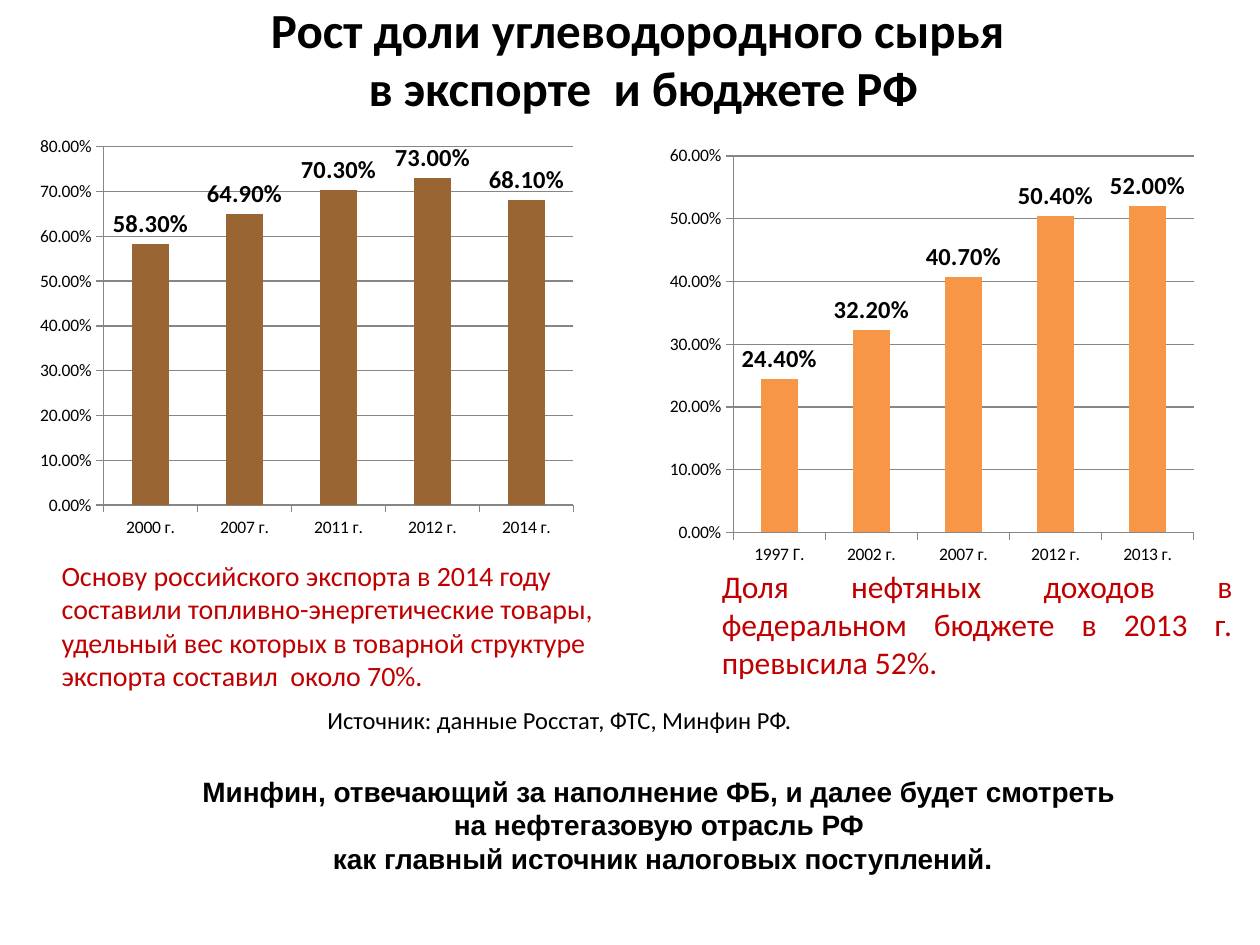
from pptx import Presentation
from pptx.chart.data import CategoryChartData
from pptx.dml.color import RGBColor
from pptx.enum.chart import XL_CHART_TYPE, XL_LABEL_POSITION, XL_TICK_MARK
from pptx.enum.text import MSO_ANCHOR, PP_ALIGN
from pptx.util import Pt

PX = 9144  # 100 px to the inch
BLACK = RGBColor(0x00, 0x00, 0x00)
RED = RGBColor(0xC0, 0x00, 0x00)
BROWN = RGBColor(0x99, 0x66, 0x33)
ORANGE = RGBColor(0xF7, 0x96, 0x46)
GRAY = RGBColor(0x86, 0x86, 0x86)
PERCENT = "0.00%"

TITLE = "Рост доли углеводородного сырья\v в экспорте  и бюджете РФ"
SOURCE = "Источник: данные Росстат, ФТС, Минфин РФ."
CONCLUSION = ("Минфин, отвечающий за наполнение ФБ, и далее будет смотреть "
              "на нефтегазовую отрасль РФ\n"
              " как главный источник налоговых поступлений.")

PANELS = [
    {"box": (23, 102, 473, 454), "chart_h": 331, "indent": 16,
     "color": BROWN, "top": 0.8,
     "data": {"2000 г.": 0.583, "2007 г.": 0.649, "2011 г.": 0.703,
              "2012 г.": 0.73, "2014 г.": 0.681},
     "caption": "Основу российского экспорта в 2014 году составили "
                "топливно-энергетические товары, удельный вес которых в "
                "товарной структуре экспорта составил  около 70%.",
     "size": 16, "align": PP_ALIGN.LEFT},
    {"box": (523, 109, 465, 437), "chart_h": 346, "indent": 40,
     "color": ORANGE, "top": 0.6,
     "data": {"1997 Г.": 0.244, "2002 г.": 0.322, "2007 г.": 0.407,
              "2012 г.": 0.504, "2013 г.": 0.52},
     "caption": "Доля нефтяных доходов в федеральном бюджете в 2013 г. "
                "превысила 52%.",
     "size": 18, "align": PP_ALIGN.JUSTIFY},
]


def emu(*lengths):
    return [n * PX for n in lengths]


def set_font(font, size, color=BLACK, bold=False, name="Calibri"):
    values = {"name": name, "size": Pt(size), "bold": bold}
    for key, value in values.items():
        setattr(font, key, value)
    font.color.rgb = color


def fill_text(tf, text, align, anchor=MSO_ANCHOR.TOP, **font):
    tf.word_wrap = True
    tf.vertical_anchor = anchor
    tf.text = text
    for p in tf.paragraphs:
        p.alignment = align
        for r in p.runs:
            set_font(r.font, **font)


def add_title(s, box):
    title = s.shapes.title
    for key, value in zip(("left", "top", "width", "height"), emu(*box)):
        setattr(title, key, value)
    fill_text(title.text_frame, TITLE, PP_ALIGN.CENTER, MSO_ANCHOR.MIDDLE,
              size=28, bold=True)


def add_text(s, box, text, align=PP_ALIGN.LEFT, **style):
    tf = s.shapes.add_textbox(*emu(*box)).text_frame
    fill_text(tf, text, align, **style)


def add_share_chart(s, box, data, color, top):
    chart_data = CategoryChartData(number_format=PERCENT)
    chart_data.categories = list(data)
    chart_data.add_series("Series 1", list(data.values()))
    chart = s.shapes.add_chart(XL_CHART_TYPE.COLUMN_CLUSTERED, *emu(*box),
                               chart_data).chart
    chart.has_legend = chart.has_title = False
    set_font(chart.font, 10)

    values = chart.value_axis
    values.minimum_scale, values.maximum_scale = 0, top
    values.major_unit = 0.1
    values.tick_labels.number_format = PERCENT
    values.tick_labels.number_format_is_linked = False
    values.has_major_gridlines = True
    for axis in (values, chart.category_axis):
        axis.major_tick_mark = XL_TICK_MARK.OUTSIDE
        axis.format.line.color.rgb = GRAY
    values.major_gridlines.format.line.color.rgb = GRAY

    plot = chart.plots[0]
    plot.gap_width = 150
    plot.vary_by_categories = False
    fill = plot.series[0].format.fill
    fill.solid()
    fill.fore_color.rgb = color
    plot.has_data_labels = True
    labels = plot.data_labels
    label_values = {"show_value": True, "number_format": PERCENT,
                    "number_format_is_linked": False,
                    "position": XL_LABEL_POSITION.OUTSIDE_END}
    for key, value in label_values.items():
        setattr(labels, key, value)
    set_font(labels.font, 14, bold=True)


def add_panel(s, box, chart_h, indent, data, color, top, caption, size, align):
    """Place a chart with its caption below, the caption ending at the box's right."""
    x, y, w, h = box
    caption_y = 336
    add_text(s, (x + indent, y + caption_y, w - indent, h - caption_y),
             caption, align, size=size, color=RED)
    add_share_chart(s, (x, y, w - 32, chart_h), data, color, top)


def main():
    prs = Presentation()
    prs.slide_width, prs.slide_height = emu(1000, 750)
    s = prs.slides.add_slide(prs.slide_layouts[5])
    add_title(s, (31, 0, 950, 92))
    for panel in PANELS:
        add_panel(s, **panel)
    add_text(s, (250, 555, 543, 34), SOURCE, size=14)
    add_text(s, (148, 609, 750, 91), CONCLUSION, PP_ALIGN.CENTER,
             anchor=MSO_ANCHOR.MIDDLE, size=16, bold=True, name="Arial")
    prs.save("out.pptx")


if __name__ == "__main__":
    main()
